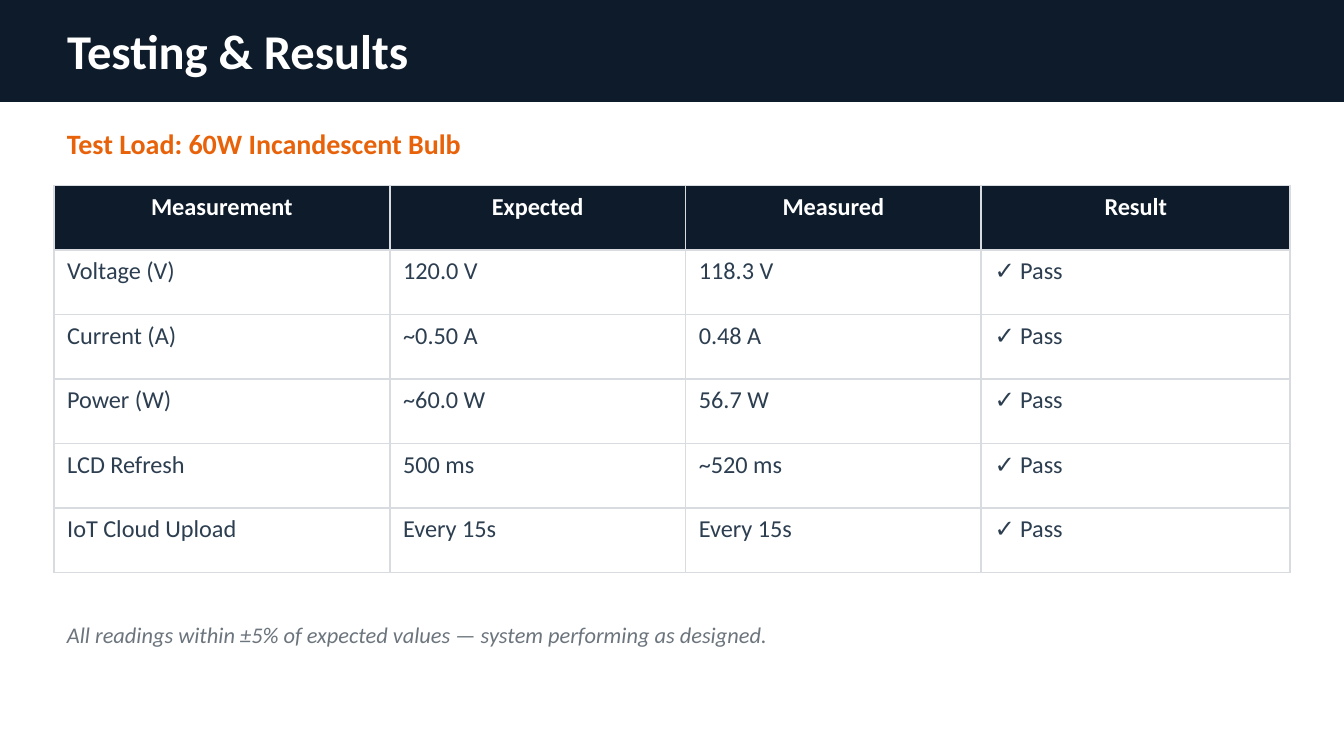
"""Builds the Testing & Results slide with its table of measurements."""
from dataclasses import dataclass

from lxml.etree import SubElement
from pptx import Presentation
from pptx.dml.color import RGBColor
from pptx.enum.shapes import MSO_SHAPE
from pptx.enum.text import MSO_ANCHOR, MSO_AUTO_SIZE, PP_ALIGN
from pptx.oxml.ns import qn
from pptx.util import Inches, Pt

TITLE = "Testing & Results"
SUBTITLE = "Test Load: 60W Incandescent Bulb"
HEADERS = ["Measurement", "Expected", "Measured", "Result"]
READINGS = [
    ["Voltage (V)", "120.0 V", "118.3 V", "✓ Pass"],
    ["Current (A)", "~0.50 A", "0.48 A", "✓ Pass"],
    ["Power (W)", "~60.0 W", "56.7 W", "✓ Pass"],
    ["LCD Refresh", "500 ms", "~520 ms", "✓ Pass"],
    ["IoT Cloud Upload", "Every 15s", "Every 15s", "✓ Pass"],
]
CONCLUSION = "All readings within ±5% of expected values — system performing as designed."

PAGE_WIDTH = 10
PAGE_HEIGHT = PAGE_WIDTH * 9 / 16
MARGIN = 0.4
CONTENT_WIDTH = PAGE_WIDTH - 2 * MARGIN
COLUMN_WIDTHS = [2.5, 2.2, 2.2, 2.3]
ROW_HEIGHT = 0.48


@dataclass(frozen=True)
class Theme:
    """Colours, font and type sizes of the slide."""
    font: str = "Calibri"
    navy: str = "0D1B2A"
    white: str = "FFFFFF"
    orange: str = "E8620A"
    ink: str = "2C3E50"
    grey: str = "6C757D"
    border: str = "D8DCE0"
    title_size: int = 26
    subtitle_size: int = 15
    table_size: int = 13
    note_size: int = 12


THEME = Theme()


def color(value):
    """Turns a hex value into a colour."""
    return RGBColor.from_string(value)


def write(frame, text, size, ink, bold=False, italic=False, align=PP_ALIGN.LEFT):
    """Writes one styled paragraph into a text frame."""
    frame.text = text
    paragraph = frame.paragraphs[0]
    paragraph.alignment = align
    font = paragraph.runs[0].font
    font.name, font.size, font.color.rgb = THEME.font, Pt(size), color(ink)
    font.bold, font.italic = bold, italic


def place(box, top, width, height):
    """Puts a text shape at the left margin and centres its text vertically."""
    box.left, box.top = Inches(MARGIN), Inches(top)
    box.width, box.height = Inches(width), Inches(height)
    frame = box.text_frame
    frame.word_wrap = True
    frame.auto_size = MSO_AUTO_SIZE.NONE
    frame.vertical_anchor = MSO_ANCHOR.MIDDLE
    return frame


def add_text(page, top, width, height):
    """Adds a text box and returns its text frame."""
    return place(page.shapes.add_textbox(0, 0, 0, 0), top, width, height)


def add_borders(cell):
    """Draws a thin line on all four sides of a cell."""
    properties = cell._tc.get_or_add_tcPr()
    for side in ("a:lnL", "a:lnR", "a:lnT", "a:lnB"):
        line = SubElement(properties, qn(side), w=str(Pt(1)))
        fill = SubElement(line, qn("a:solidFill"))
        SubElement(fill, qn("a:srgbClr"), val=THEME.border)


def add_title_bar(page):
    """Adds the dark bar with the slide title on it."""
    bar = page.shapes.add_shape(MSO_SHAPE.RECTANGLE, 0, 0, Inches(PAGE_WIDTH), Inches(0.75))
    bar.shadow.inherit = False
    bar.fill.solid()
    bar.fill.fore_color.rgb = color(THEME.navy)
    bar.line.color.rgb = color(THEME.navy)
    bar.line.width = Pt(1)
    title = page.shapes.title
    title.element.addprevious(bar.element)
    write(place(title, 0.1, CONTENT_WIDTH, 0.55), TITLE, THEME.title_size, THEME.white, bold=True)


def add_results(page):
    """Adds the table of expected and measured values."""
    rows = [HEADERS] + READINGS
    table = page.shapes.add_table(
        len(rows), len(HEADERS), Inches(MARGIN), Inches(1.38),
        Inches(CONTENT_WIDTH), Inches(ROW_HEIGHT * len(rows))).table
    table.horz_banding = False
    for column, width in zip(table.columns, COLUMN_WIDTHS):
        column.width = Inches(width)
    for row_index, texts in enumerate(rows):
        table.rows[row_index].height = Inches(ROW_HEIGHT)
        header = row_index == 0
        for column_index, text in enumerate(texts):
            cell = table.cell(row_index, column_index)
            add_borders(cell)
            if header:
                cell.fill.solid()
                cell.fill.fore_color.rgb = color(THEME.navy)
            else:
                cell.fill.background()
            write(cell.text_frame, text, THEME.table_size,
                  THEME.white if header else THEME.ink, bold=header,
                  align=PP_ALIGN.CENTER if header else PP_ALIGN.LEFT)


def main():
    """Builds and saves the deck."""
    deck = Presentation()
    deck.slide_width, deck.slide_height = Inches(PAGE_WIDTH), Inches(PAGE_HEIGHT)
    page = deck.slides.add_slide(deck.slide_layouts.get_by_name("Title Only"))
    add_title_bar(page)
    write(add_text(page, 0.88, 9, 0.38), SUBTITLE, THEME.subtitle_size, THEME.orange, bold=True)
    add_results(page)
    write(add_text(page, 4.55, CONTENT_WIDTH, 0.35), CONCLUSION,
          THEME.note_size, THEME.grey, italic=True)
    deck.save("out.pptx")


if __name__ == "__main__":
    main()
